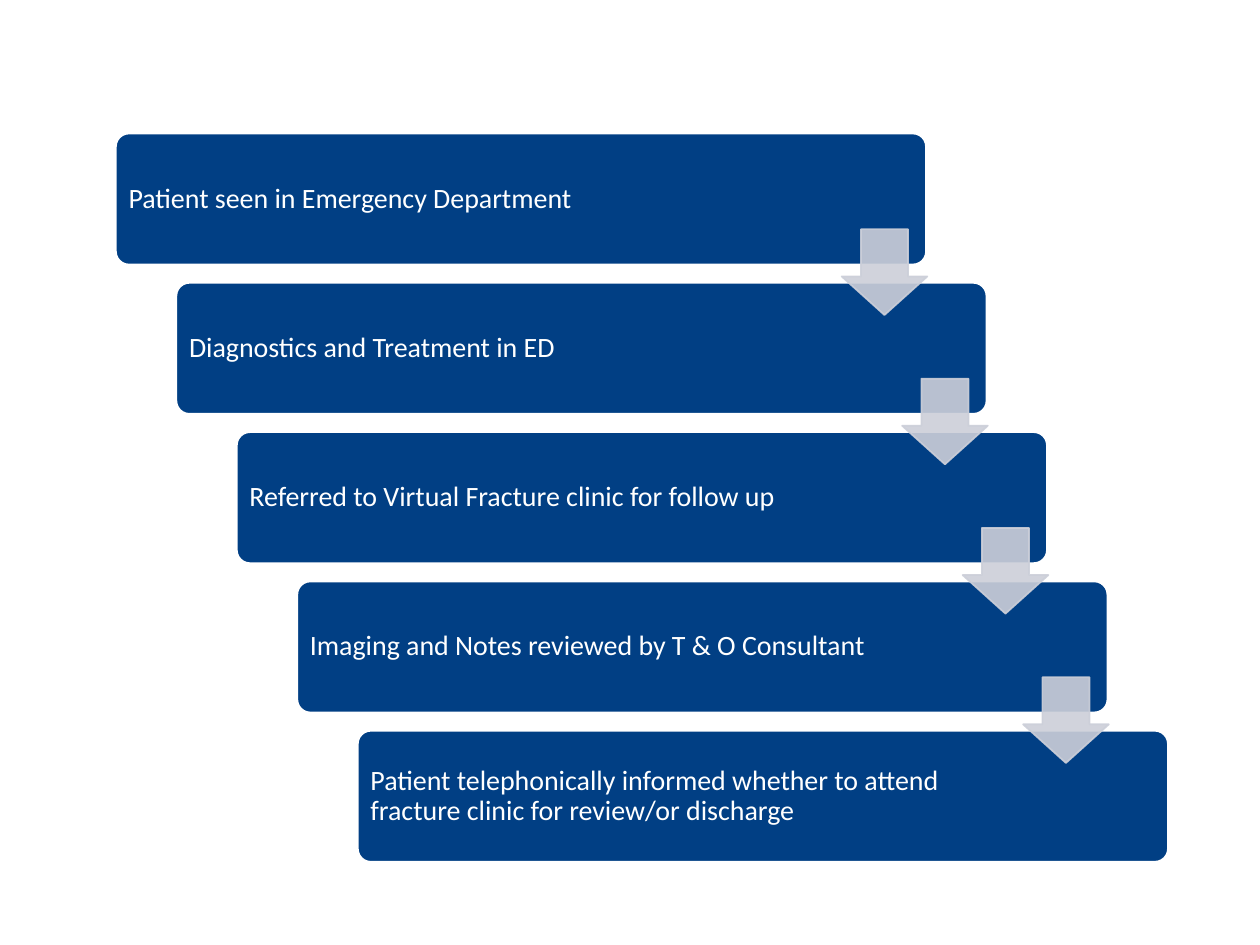
from lxml import etree
from pptx import Presentation
from pptx.dml.color import RGBColor
from pptx.enum.shapes import MSO_SHAPE
from pptx.enum.text import MSO_ANCHOR, PP_ALIGN
from pptx.oxml.ns import qn
from pptx.util import Inches, Pt

BOX = MSO_SHAPE.ROUNDED_RECTANGLE
ARROW = MSO_SHAPE.DOWN_ARROW
MIDDLE = MSO_ANCHOR.MIDDLE
LEFT = PP_ALIGN.LEFT

COLORS = {"step": "013F84", "edge": "FFFFFF", "text": "FFFFFF", "arrow": "CCCFD9"}
FONT = {"name": "Calibri", "size": Pt(16)}
FRAME = {
    "word_wrap": True,
    "vertical_anchor": MIDDLE,
    "margin_left": Inches(0.07),
    "margin_top": Inches(0.07),
    "margin_right": Inches(1.23),
    "margin_bottom": Inches(0.07),
}
STEPS = [
    "Patient seen in Emergency Department",
    "Diagnostics and Treatment in ED",
    "Referred to Virtual Fracture clinic for follow up",
    "Imaging and Notes reviewed by T & O Consultant",
    "Patient telephonically informed whether to attend "
    "fracture clinic for review/or discharge",
]
STEP_W, STEP_H = 6.43, 1.04
ARROW_SIZE = 0.68


def color(name):
    return RGBColor.from_string(COLORS[name])


def format_all(target, values):
    for name, value in values.items():
        setattr(target, name, value)


def add_block(slide, kind, box, adjust, fill, edge):
    shape = slide.shapes.add_shape(kind, *(Inches(n) for n in box))
    for index, value in enumerate(adjust):
        shape.adjustments[index] = value
    shape.shadow.inherit = False
    shape.fill.solid()
    shape.fill.fore_color.rgb = color(fill)
    shape.line.color.rgb = color(edge)
    shape.line.width = Pt(1)
    return shape


def add_step(slide, left, top, text):
    box = (left, top, STEP_W, STEP_H)
    shape = add_block(slide, BOX, box, [0.1], "step", "edge")
    frame = shape.text_frame
    format_all(frame, FRAME)
    para = frame.paragraphs[0]
    para.text = text
    para.alignment = LEFT
    para.line_spacing = 0.9
    format_all(para.font, FONT)
    para.font.color.rgb = color("text")


def add_arrow(slide, left, top):
    """Place a slightly see-through arrow on the lower right of a step."""
    box = (left + 5.76, top + 0.76, ARROW_SIZE, ARROW_SIZE)
    shape = add_block(slide, ARROW, box, [0.55, 0.45], "arrow", "arrow")
    for tone in shape._element.spPr.iter(qn("a:srgbClr")):
        etree.SubElement(tone, qn("a:alpha"), val="90000")


def add_stairs(slide, left, top, right, bottom):
    """Spread the steps evenly from the top left to the bottom right."""
    gaps = len(STEPS) - 1
    dx = (right - left - STEP_W) / gaps
    dy = (bottom - top - STEP_H) / gaps
    spots = [(left + i * dx, top + i * dy) for i in range(len(STEPS))]
    for spot, text in zip(spots, STEPS):
        add_step(slide, *spot, text)
    for spot in spots[:-1]:
        add_arrow(slide, *spot)


def main():
    deck = Presentation()
    deck.slide_width, deck.slide_height = Inches(10), Inches(7.5)
    slide = deck.slides.add_slide(deck.slide_layouts[6])
    add_stairs(slide, 0.92, 1.06, 9.27, 6.84)
    deck.save("out.pptx")


if __name__ == "__main__":
    main()
